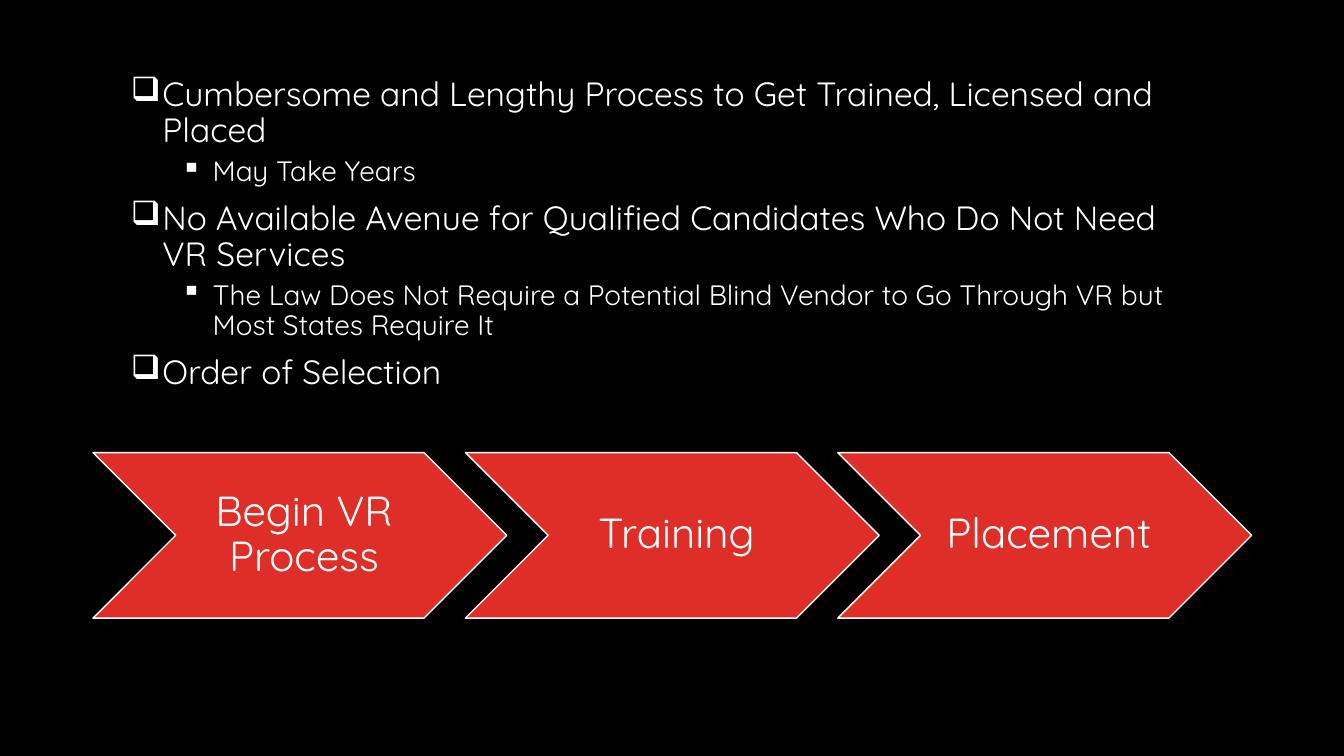
from dataclasses import dataclass

from lxml.etree import SubElement
from pptx import Presentation
from pptx.dml.color import RGBColor
from pptx.enum.shapes import MSO_SHAPE
from pptx.enum.text import MSO_ANCHOR, PP_ALIGN
from pptx.oxml.ns import qn
from pptx.util import Pt


@dataclass(frozen=True)
class Theme:
    """Colours, font and type sizes of the slide."""
    back: RGBColor = RGBColor(0x00, 0x00, 0x00)
    ink: RGBColor = RGBColor(0xFF, 0xFF, 0xFF)
    accent: RGBColor = RGBColor(0xDF, 0x2E, 0x28)
    font: str = "Quicksand"
    step_size: int = 30
    level_sizes: tuple = (24, 20)


THEME = Theme()
BULLETS = ("❑", "▪")
INDENTS = (22.5, 58.5)
HANGING = 22.5
GAPS = (10, 5)

POINTS = [
    (0, "Cumbersome and Lengthy Process to Get Trained, Licensed and Placed"),
    (1, "May Take Years"),
    (0, "No Available Avenue for Qualified Candidates Who Do Not Need VR Services"),
    (1, "The Law Does Not Require a Potential Blind Vendor to Go Through VR "
        "but Most States Require It"),
    (0, "Order of Selection"),
]
STEPS = ["Begin VR Process", "Training", "Placement"]


def style_paragraph(p, size):
    """Set line spacing and the look of the runs."""
    p.line_spacing = 0.9
    for r in p.runs:
        r.font.name = THEME.font
        r.font.size = Pt(size)
        r.font.color.rgb = THEME.ink


def add_bullet(p, level):
    """Give a paragraph the hanging bullet of its level."""
    p.level = level
    pPr = p._p.get_or_add_pPr()
    pPr.set("marL", str(Pt(INDENTS[level])))
    pPr.set("indent", str(Pt(-HANGING)))
    SubElement(pPr, qn("a:buChar")).set("char", BULLETS[level])


def add_points(s, points, left, top, width, height):
    """Write the two-level list in the given box."""
    sp = s.shapes.add_textbox(Pt(left), Pt(top), Pt(width), Pt(height))
    tf = sp.text_frame
    tf.word_wrap = True
    tf.text = "\n".join(text for _, text in points)
    for i, (p, (level, _)) in enumerate(zip(tf.paragraphs, points)):
        add_bullet(p, level)
        style_paragraph(p, THEME.level_sizes[level])
        p.space_before = Pt(GAPS[level] if i else 0)


def add_process(s, steps, left, top, width):
    """Draw a row of chevrons, each starting 90% of a chevron after the last."""
    w = width / (1 + 0.9 * (len(steps) - 1))
    for i, step in enumerate(steps):
        sp = s.shapes.add_shape(MSO_SHAPE.CHEVRON, Pt(left + 0.9 * w * i), Pt(top),
                                Pt(w), Pt(0.4 * w))
        sp.shadow.inherit = False
        sp.fill.solid()
        sp.fill.fore_color.rgb = THEME.accent
        sp.line.color.rgb = THEME.ink
        sp.line.width = Pt(1)
        tf = sp.text_frame
        tf.word_wrap = True
        tf.vertical_anchor = MSO_ANCHOR.MIDDLE
        tf.margin_left = Pt(9)
        tf.margin_top = tf.margin_right = tf.margin_bottom = Pt(3)
        tf.text = step
        p = tf.paragraphs[0]
        p.alignment = PP_ALIGN.CENTER
        style_paragraph(p, THEME.step_size)


def add_barriers_slide(prs):
    """Build the slide with the list above the process row."""
    s = prs.slides.add_slide(prs.slide_layouts[6])
    s.background.fill.solid()
    s.background.fill.fore_color.rgb = THEME.back
    add_points(s, POINTS, 86.4, 51.84, 784, 257)
    add_process(s, STEPS, 66.4, 323.3, 827.7)


def main():
    """Create the presentation and save it."""
    prs = Presentation()
    prs.slide_width, prs.slide_height = Pt(960), Pt(540)
    add_barriers_slide(prs)
    prs.save("out.pptx")


if __name__ == "__main__":
    main()
